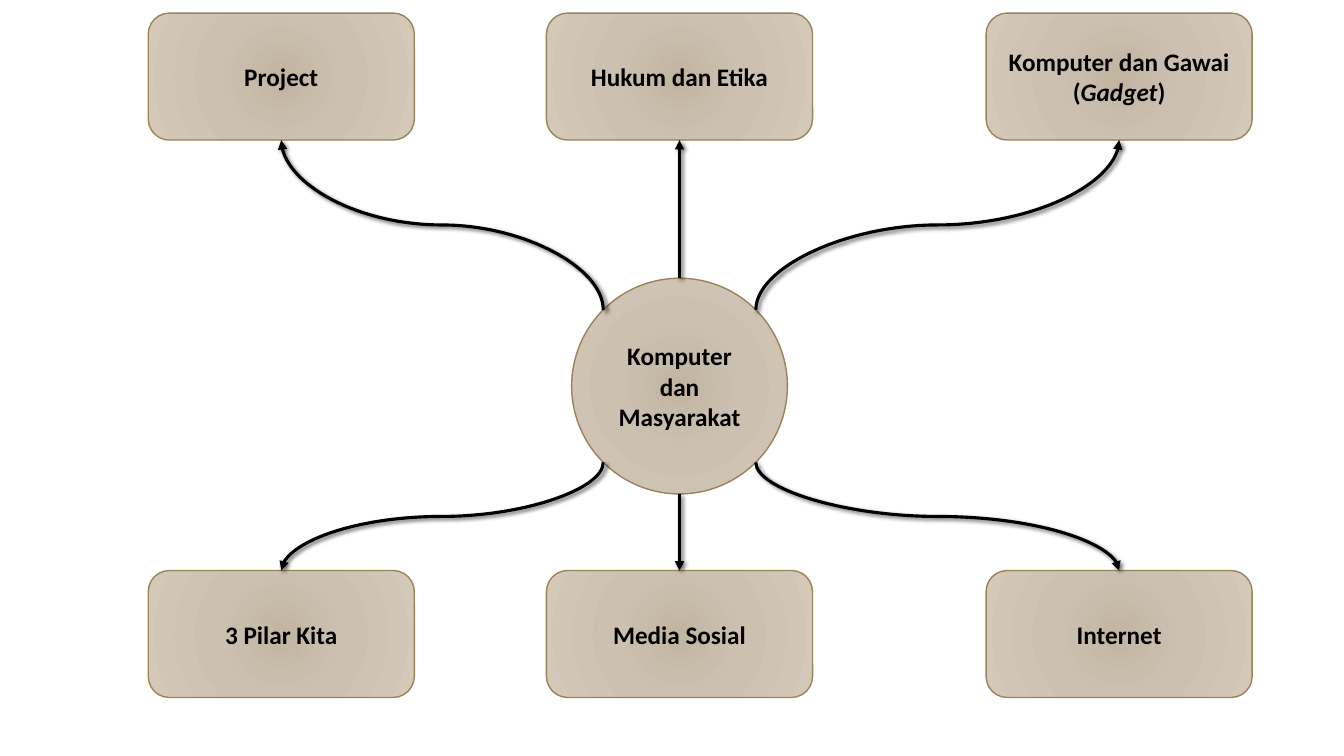
from dataclasses import dataclass
from math import copysign, sqrt

from lxml import etree
from pptx import Presentation
from pptx.dml.color import RGBColor
from pptx.enum.shapes import MSO_CONNECTOR, MSO_SHAPE
from pptx.enum.text import MSO_ANCHOR, PP_ALIGN
from pptx.oxml import parse_xml
from pptx.oxml.ns import nsdecls, qn
from pptx.shapes.autoshape import Shape
from pptx.shapes.connector import Connector
from pptx.slide import Slide
from pptx.util import Inches, Pt

CURVE = MSO_CONNECTOR.CURVE
STRAIGHT = MSO_CONNECTOR.STRAIGHT
ELLIPSE = MSO_SHAPE.OVAL
ROUNDED = MSO_SHAPE.ROUNDED_RECTANGLE
CENTER = PP_ALIGN.CENTER
MIDDLE = MSO_ANCHOR.MIDDLE
TOP_SITE, BOTTOM_SITE = 0, 2
QUARTER_TURN = "5400000"
BLANK_LAYOUT = 6

SLIDE_WIDTH = Inches(13.33)
SLIDE_HEIGHT = Inches(7.5)


@dataclass(frozen=True)
class Theme:
    font: str = "Calibri"
    text_size: float = 18
    text: str = "000000"
    arrow: str = "000000"
    arrow_width: float = 2.25
    outline: str = "9B8357"
    outline_width: float = 1
    gradient: tuple[tuple[int, str], ...] = ((0, "C2B5A2"), (45, "CCC1B1"), (100, "D4C8B8"))


@dataclass(frozen=True)
class TextRun:
    text: str
    italic: bool = False


@dataclass(frozen=True)
class Topic:
    column: int
    row: int
    runs: tuple[TextRun, ...]


def across(percent: float) -> int:
    return round(SLIDE_WIDTH * percent / 100)


def down(percent: float) -> int:
    return round(SLIDE_HEIGHT * percent / 100)


THEME = Theme()
COLUMN_CENTERS = (across(20.93), across(50.56), across(83.27))
ROW_CENTERS = (down(10.13), down(83.87))
BOX_WIDTH, BOX_HEIGHT = across(19.8), down(16.8)
HUB_X, HUB_Y = COLUMN_CENTERS[1], down(51.07)
HUB_SIZE = down(28.53)

HUB_RUNS = (TextRun("Komputer dan Masyarakat"),)
TOPICS = (
    Topic(0, 0, (TextRun("Project"),)),
    Topic(1, 0, (TextRun("Hukum dan Etika"),)),
    Topic(2, 0, (TextRun("Komputer dan Gawai ("), TextRun("Gadget", italic=True), TextRun(")"))),
    Topic(0, 1, (TextRun("3 Pilar Kita"),)),
    Topic(1, 1, (TextRun("Media Sosial"),)),
    Topic(2, 1, (TextRun("Internet"),)),
)


def fill_with_gradient(shape: Shape) -> None:
    stops = "".join(
        f'<a:gs pos="{position * 1000}"><a:srgbClr val="{color}"/></a:gs>'
        for position, color in THEME.gradient
    )
    gradient = parse_xml(
        f'<a:gradFill {nsdecls("a")} rotWithShape="1"><a:gsLst>{stops}</a:gsLst>'
        '<a:path path="circle"><a:fillToRect l="100000" t="100000" r="100000" b="100000"/>'
        "</a:path></a:gradFill>"
    )
    shape._element.spPr.find(qn("a:prstGeom")).addnext(gradient)


def add_node(slide: Slide, preset: MSO_SHAPE, center_x: int, center_y: int,
             width: int, height: int, runs: tuple[TextRun, ...]) -> Shape:
    """Draw a labelled shape around its centre point."""
    shape = slide.shapes.add_shape(
        preset, center_x - width // 2, center_y - height // 2, width, height)
    shape.shadow.inherit = False
    fill_with_gradient(shape)
    shape.line.color.rgb = RGBColor.from_string(THEME.outline)
    shape.line.width = Pt(THEME.outline_width)
    frame = shape.text_frame
    frame.word_wrap = True
    frame.vertical_anchor = MIDDLE
    paragraph = frame.paragraphs[0]
    paragraph.alignment = CENTER
    for item in runs:
        run = paragraph.add_run()
        run.text = item.text
        run.font.name = THEME.font
        run.font.size = Pt(THEME.text_size)
        run.font.bold = True
        run.font.italic = item.italic
        run.font.color.rgb = RGBColor.from_string(THEME.text)
    return shape


def style_arrow(connector: Connector) -> None:
    connector.line.color.rgb = RGBColor.from_string(THEME.arrow)
    connector.line.width = Pt(THEME.arrow_width)
    etree.SubElement(connector.line._get_or_add_ln(), qn("a:tailEnd"), type="triangle")
    connector._element.spPr.append(parse_xml(
        f'<a:effectLst {nsdecls("a")}><a:outerShdw blurRad="{Pt(3)}" dist="{Pt(2)}" '
        f'dir="2700000" algn="tl" rotWithShape="0"><a:srgbClr val="{THEME.arrow}">'
        '<a:alpha val="60000"/></a:srgbClr></a:outerShdw></a:effectLst>'
    ))


def add_vertical_curve(slide: Slide, start_x: int, start_y: int,
                       end_x: int, end_y: int) -> Connector:
    """Add a curve that leaves and arrives vertically, as a level curve turned by 90 degrees."""
    middle_x, middle_y = (start_x + end_x) // 2, (start_y + end_y) // 2
    half_run, half_rise = (end_x - start_x) // 2, (end_y - start_y) // 2
    connector = slide.shapes.add_connector(
        CURVE, middle_x - half_rise, middle_y + half_run,
        middle_x + half_rise, middle_y - half_run)
    connector._element.spPr.find(qn("a:xfrm")).set("rot", QUARTER_TURN)
    return connector


def add_arrow(slide: Slide, topic: Topic, box: Shape) -> None:
    """Link the hub to a topic: straight in the hub's column, curved elsewhere."""
    end_x = COLUMN_CENTERS[topic.column]
    direction = -1 if topic.row == 0 else 1
    end_y = ROW_CENTERS[topic.row] - direction * BOX_HEIGHT // 2
    radius = HUB_SIZE / 2
    if end_x == HUB_X:
        connector = slide.shapes.add_connector(
            STRAIGHT, HUB_X, round(HUB_Y + direction * radius), end_x, end_y)
        connector.end_connect(box, BOTTOM_SITE if topic.row == 0 else TOP_SITE)
    else:
        offset = radius / sqrt(2)
        start_x = round(HUB_X + copysign(offset, end_x - HUB_X))
        start_y = round(HUB_Y + direction * offset)
        connector = add_vertical_curve(slide, start_x, start_y, end_x, end_y)
    style_arrow(connector)


def main() -> None:
    presentation = Presentation()
    presentation.slide_width = SLIDE_WIDTH
    presentation.slide_height = SLIDE_HEIGHT
    slide = presentation.slides.add_slide(presentation.slide_layouts[BLANK_LAYOUT])
    add_node(slide, ELLIPSE, HUB_X, HUB_Y, HUB_SIZE, HUB_SIZE, HUB_RUNS)
    for topic in TOPICS:
        box = add_node(slide, ROUNDED, COLUMN_CENTERS[topic.column], ROW_CENTERS[topic.row],
                       BOX_WIDTH, BOX_HEIGHT, topic.runs)
        add_arrow(slide, topic, box)
    presentation.save("out.pptx")


if __name__ == "__main__":
    main()
